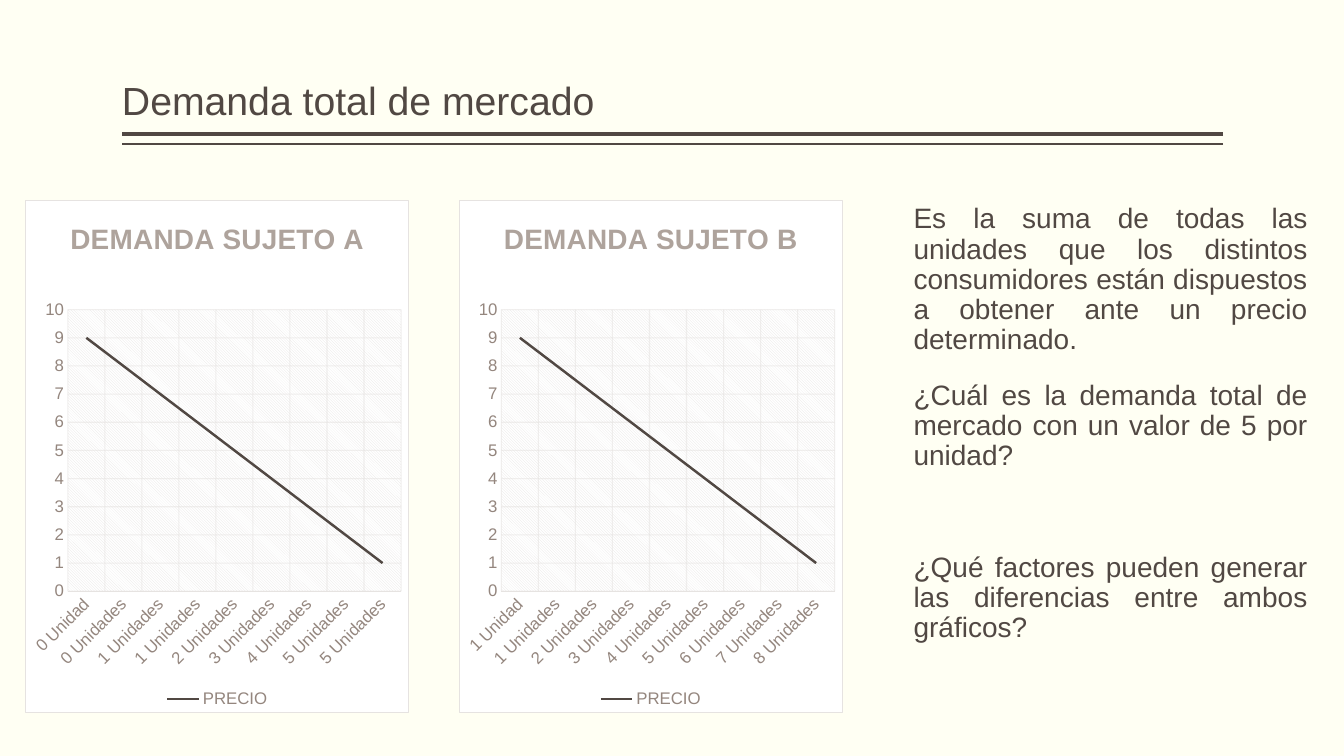
import pptx
import pptx.chart.data
import pptx.dml.color
import pptx.enum.chart
import pptx.enum.text
import pptx.oxml
import pptx.oxml.ns
import pptx.util

WIDTH, HEIGHT = 13.33, 7.5
INK, LABEL, HEADING, GRID, PAPER = "514843", "94867E", "AEA39C", "E6E3E1", "FFFFF3"
FONT = "Arial"
HEADER_BOX = (1.21, 0.08, 10.92, 1.2)
RULES = ((1.33, 3), (1.43, 1))
TOP = 1.98
CHART_LEFT, CHART_STEP = 0.25, 4.3
CHART_SIZE = (3.81, 5.09)
TEXT_BOX = (8.94, TOP, 4.03, 5)
PLOT_SHARES = {"x": 0.11, "y": 0.214, "w": 0.87, "h": 0.55}
PRICES = (9, 8, 7, 6, 5, 4, 3, 2, 1)
DEMANDS = {
    "DEMANDA SUJETO A": (0, 0, 1, 1, 2, 3, 4, 5, 5),
    "DEMANDA SUJETO B": (1, 1, 2, 3, 4, 5, 6, 7, 8),
}
PARAGRAPHS = (
    ("Es la suma de todas las unidades que los distintos consumidores están "
     "dispuestos a obtener ante un precio determinado.", 18),
    ("¿Cuál es la demanda total de mercado con un valor de 5 por unidad?", 18),
    ("¿Qué factores pueden generar las diferencias entre ambos gráficos?", 58),
)


def rgb(value):
    """Turn a hex string into a colour."""
    return pptx.dml.color.RGBColor.from_string(value)


def assign(target, values):
    """Set attributes of the target from a dict."""
    for name, value in values.items():
        setattr(target, name, value)


def style_font(font, size, color, bold=False):
    """Give a font its face, size, weight and colour."""
    assign(font, {"name": FONT, "size": pptx.util.Pt(size), "bold": bold})
    font.color.rgb = rgb(color)


def style_line(line, color, width):
    """Give a line its colour and width."""
    line.color.rgb = rgb(color)
    line.width = pptx.util.Pt(width)


def element(markup):
    """Parse a fragment of chart or drawing markup."""
    tag, rest = markup[1:].split(">", 1)
    return pptx.oxml.parse_xml(f"<{tag} {pptx.oxml.ns.nsdecls('a', 'c')}>{rest}")


def place(shape, box):
    """Move a shape to a box given in inches."""
    names = ("left", "top", "width", "height")
    assign(shape, dict(zip(names, map(pptx.util.Inches, box))))


def prepare_frame(frame, anchor):
    """Set margins, wrapping and anchor of a text frame."""
    edge = pptx.util.Inches(0.05)
    assign(frame, {
        "margin_left": 0, "margin_right": 0, "margin_top": edge,
        "margin_bottom": edge, "word_wrap": True, "vertical_anchor": anchor,
        "auto_size": pptx.enum.text.MSO_AUTO_SIZE.NONE,
    })


def add_header(slide, box):
    """Fill the title and draw the two rules under it."""
    title = slide.shapes.title
    place(title, box)
    prepare_frame(title.text_frame, pptx.enum.text.MSO_ANCHOR.BOTTOM)
    title.text_frame.text = "Demanda total de mercado"
    paragraph = title.text_frame.paragraphs[0]
    assign(paragraph, {"alignment": pptx.enum.text.PP_ALIGN.LEFT, "line_spacing": 0.9})
    style_font(paragraph.runs[0].font, 28, INK)
    left, right = box[0], box[0] + box[2]
    for y, weight in RULES:
        ends = map(pptx.util.Inches, (right, y, left, y))
        rule = slide.shapes.add_connector(pptx.enum.shapes.MSO_CONNECTOR.STRAIGHT, *ends)
        style_line(rule.line, INK, weight)
        rule._element.spPr.append(element("<a:effectLst></a:effectLst>"))


def add_questions(slide, box):
    """Fill the body with the definition and the questions."""
    body = slide.placeholders[1]
    place(body, box)
    frame = body.text_frame
    prepare_frame(frame, pptx.enum.text.MSO_ANCHOR.TOP)
    frame.text = "\n".join(text for text, _ in PARAGRAPHS)
    for paragraph, (_, space) in zip(frame.paragraphs, PARAGRAPHS):
        assign(paragraph, {
            "alignment": pptx.enum.text.PP_ALIGN.JUSTIFY, "line_spacing": 0.9,
            "space_before": pptx.util.Pt(space),
        })
        properties = paragraph._p.get_or_add_pPr()
        properties.set("marL", str(pptx.util.Inches(0.12)))
        properties.set("indent", "0")
        properties.append(element("<a:buNone></a:buNone>"))
        style_font(paragraph.runs[0].font, 20, INK)


def style_axis(axis):
    """Format labels, ticks and gridlines of an axis."""
    none = pptx.enum.chart.XL_TICK_MARK.NONE
    assign(axis, {"major_tick_mark": none, "minor_tick_mark": none,
                  "has_major_gridlines": True})
    style_font(axis.tick_labels.font, 12, LABEL)
    grid = axis.major_gridlines.format.line
    style_line(grid, GRID, 0.75)
    color = axis.major_gridlines._xAx.find(".//" + pptx.oxml.ns.qn("a:srgbClr"),)
    for color in axis._element.majorGridlines.iter(pptx.oxml.ns.qn("a:srgbClr")):
        color.append(element('<a:alpha>' + "</a:alpha>"))
        color[-1].set("val", "54000")


def style_backgrounds(chart):
    """Fix the plot position and fill the chart and plot areas."""
    space = chart._chartSpace
    plot = space.chart.plotArea
    for layout in plot.findall(pptx.oxml.ns.qn("c:layout")):
        plot.remove(layout)
    shares = "".join(f'<c:{k} val="{v}"/>' for k, v in PLOT_SHARES.items())
    plot.insert(0, element(
        '<c:layout><c:manualLayout><c:layoutTarget val="inner"/>'
        '<c:xMode val="edge"/><c:yMode val="edge"/>'
        f"{shares}</c:manualLayout></c:layout>"))
    plot.append(element(
        '<c:spPr><a:pattFill prst="ltDnDiag">'
        f'<a:fgClr><a:srgbClr val="{GRID}"/></a:fgClr>'
        '<a:bgClr><a:srgbClr val="FFFFFF"/></a:bgClr></a:pattFill>'
        "<a:ln><a:noFill/></a:ln></c:spPr>"))
    space.chart.addnext(element(
        '<c:spPr><a:solidFill><a:srgbClr val="FFFFFF"/></a:solidFill>'
        f'<a:ln w="9525"><a:solidFill><a:srgbClr val="{GRID}"/></a:solidFill></a:ln>'
        "</c:spPr>"))


def add_demand(slide, box, heading, units):
    """Draw the demand line of one consumer."""
    data = pptx.chart.data.CategoryChartData()
    data.categories = [f"{unit} {'Unidades' if i else 'Unidad'}"
                       for i, unit in enumerate(units)]
    data.add_series("PRECIO", PRICES)
    chart = slide.shapes.add_chart(
        pptx.enum.chart.XL_CHART_TYPE.LINE, *map(pptx.util.Inches, box), data).chart
    style_font(chart.font, 10, INK)
    chart.chart_title.text_frame.text = heading
    style_font(chart.chart_title.text_frame.paragraphs[0].runs[0].font, 20, HEADING, True)
    chart.chart_title.include_in_layout = False
    chart.has_legend = True
    assign(chart.legend, {"position": pptx.enum.chart.XL_LEGEND_POSITION.BOTTOM,
                          "include_in_layout": False})
    style_font(chart.legend.font, 12, LABEL)
    for axis in (chart.category_axis, chart.value_axis):
        style_axis(axis)
    style_line(chart.category_axis.format.line, GRID, 0.75)
    labels = chart.category_axis._element.find(pptx.oxml.ns.qn("c:txPr"))
    labels.find(pptx.oxml.ns.qn("a:bodyPr")).set("rot", "-2700000")
    assign(chart.value_axis, {"minimum_scale": 0, "maximum_scale": 10, "major_unit": 1})
    chart.value_axis.format.line.fill.background()
    chart.plots[0].vary_by_categories = False
    price = chart.plots[0].series[0]
    price.smooth = False
    price.marker.style = pptx.enum.chart.XL_MARKER_STYLE.NONE
    style_line(price.format.line, INK, 1.75)
    style_backgrounds(chart)


def main():
    """Build the slide and save it."""
    deck = pptx.Presentation()
    assign(deck, {"slide_width": pptx.util.Inches(WIDTH),
                  "slide_height": pptx.util.Inches(HEIGHT)})
    slide = deck.slides.add_slide(deck.slide_layouts[1])
    slide.background.fill.solid()
    slide.background.fill.fore_color.rgb = rgb(PAPER)
    add_header(slide, HEADER_BOX)
    add_questions(slide, TEXT_BOX)
    for column, (heading, units) in enumerate(DEMANDS.items()):
        box = (CHART_LEFT + column * CHART_STEP, TOP, *CHART_SIZE)
        add_demand(slide, box, heading, units)
    deck.save("out.pptx")


if __name__ == "__main__":
    main()
